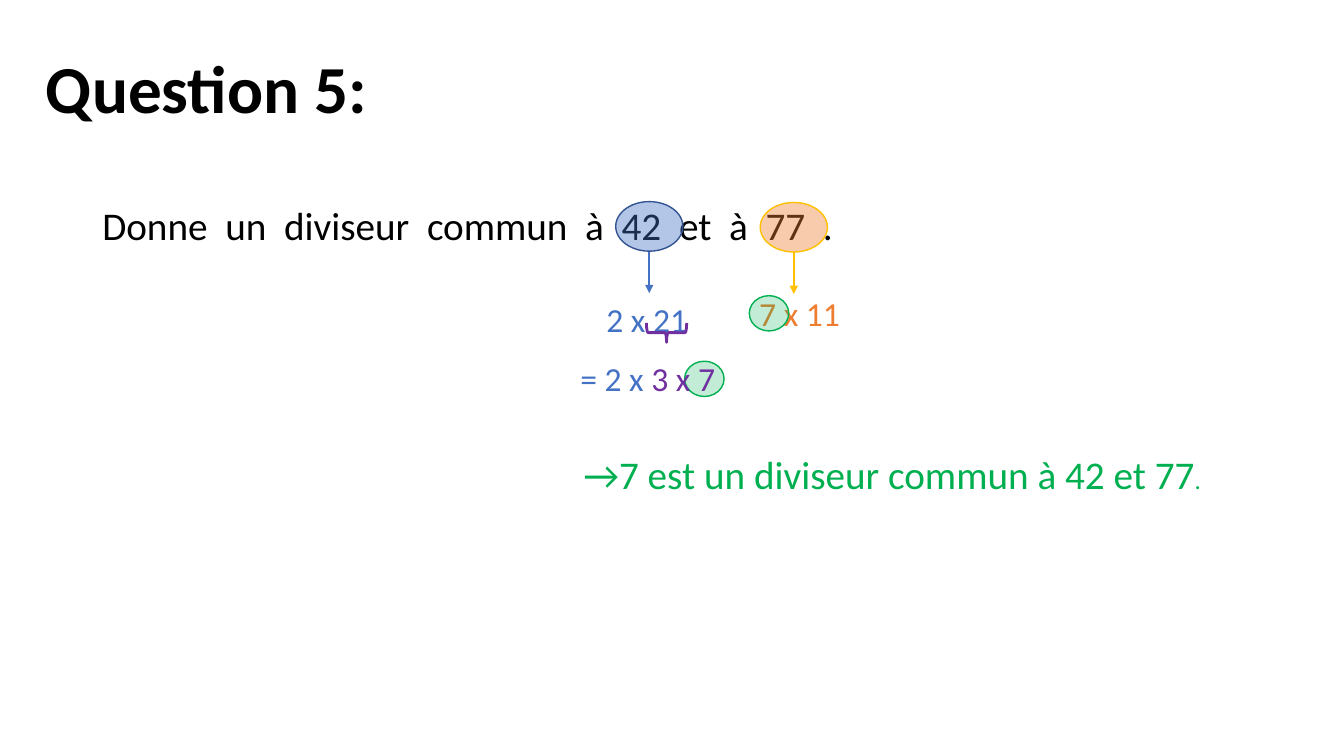
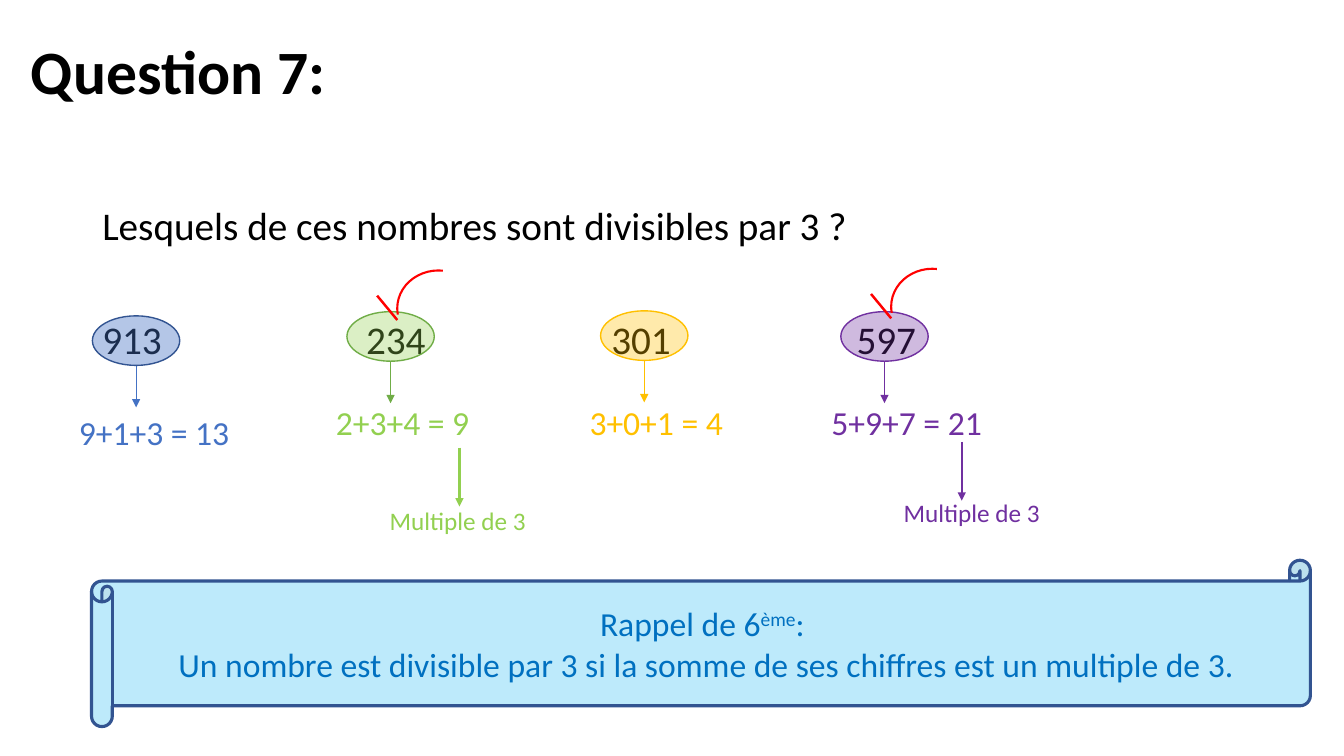
from lxml.etree import SubElement
from pptx import Presentation
from pptx.dml.color import RGBColor
from pptx.enum.shapes import MSO_CONNECTOR, MSO_SHAPE
from pptx.enum.text import MSO_ANCHOR, PP_ALIGN
from pptx.oxml.ns import qn
from pptx.util import Emu, Inches, Pt

COLS, ROWS = 160, 90
CELL = Inches(1) / 12
FONT = "Calibri"
HUES = {
    "black": "000000", "blue": "4472C4", "navy": "325491", "orange": "ED7D31",
    "gold": "FFC000", "green": "00B050", "lime": "92D050", "leaf": "70AD47",
    "purple": "7030A0", "red": "FF0000", "sky": "00B0F0", "ink": "0070C0",
}


def grid(*cells):
    return [Emu(round(n * CELL)) for n in cells]


def hue(name):
    return RGBColor.from_string(HUES[name])


def write(frame, lines, size=24, color="black", bold=False, align=None,
          anchor=MSO_ANCHOR.TOP, lead=None):
    frame.word_wrap = True
    frame.vertical_anchor = anchor
    for at, line in enumerate(lines):
        para = frame.paragraphs[0] if at == 0 else frame.add_paragraph()
        para.alignment = align
        para.line_spacing = lead
        for part in line:
            words, style = part if isinstance(part, tuple) else (part, {})
            run = para.add_run()
            run.text = words
            font = run.font
            font.name, font.bold = FONT, bold
            font.size = Pt(style.get("size", size))
            font.color.rgb = hue(style.get("color", color))
            for key in ("baseline", "spc"):
                if key in style:
                    font._element.set(key, str(style[key]))


def label(slide, box, *parts, **style):
    frame = slide.shapes.add_textbox(*grid(*box)).text_frame
    write(frame, [parts], **style)


def title(slide, left, top, words, size):
    label(slide, (left, top, 138, 17.4), words, size=size, bold=True,
          anchor=MSO_ANCHOR.MIDDLE, lead=0.9)


def ask(slide, *parts):
    label(slide, (11, 24, 138, 7), *parts, size=28, lead=0.9)


def shape(slide, kind, box, edge, width=1, fill=None, alpha=100):
    item = slide.shapes.add_shape(kind, *grid(*box))
    item.shadow.inherit = False
    item.line.color.rgb = hue(edge)
    item.line.width = Pt(width)
    if fill:
        item.fill.solid()
        item.fill.fore_color.rgb = hue(fill)
        tint = item._element.spPr.find(qn("a:solidFill"))[0]
        SubElement(tint, qn("a:alpha")).set("val", str(alpha * 1000))
    else:
        item.fill.background()
    return item


def stroke(slide, start, end, color, width, head=False):
    item = slide.shapes.add_connector(MSO_CONNECTOR.STRAIGHT, *grid(*start, *end))
    item.line.color.rgb = hue(color)
    item.line.width = Pt(width)
    props = item._element.spPr
    if head:
        SubElement(props.find(qn("a:ln")), qn("a:tailEnd")).set("type", "triangle")
    SubElement(props, qn("a:effectLst"))


def arrow(slide, left, top, drop, color, width):
    stroke(slide, (left, top), (left, top + drop), color, width, head=True)


def ring(slide, box, fill, edge, alpha, color, width):
    left, top, wide, high = box
    arrow(slide, left + wide / 2, top + high, 5, color, width)
    shape(slide, MSO_SHAPE.OVAL, box, edge, fill=fill, alpha=alpha)


def tick(slide, left, top):
    stroke(slide, (left, top + 3), (left + 2.4, top + 5.9), "red", 1.75)
    arc = shape(slide, MSO_SHAPE.ARC, (left + 2.4, top, 9.8, 9), "red", 1.5)
    arc.adjustments[0] = 102.68
    arc.adjustments[1] = 166.11


def test(slide, left, top, number, inset, total, shift, fill, edge, alpha, color):
    label(slide, (left + inset, 37, 12, 7), number, size=28)
    ring(slide, (left, top, 10.4, 5.9), fill, edge, alpha, color, 0.5)
    label(slide, (left + shift[0], top + shift[1], 22, 6), total, color=fill)


def proof(slide, left, top, shift, color):
    arrow(slide, left, top, 7, color, 1.5)
    label(slide, (left + shift[0], top + shift[1], 20, 5), "Multiple de 3",
          size=18, color=color)


def scroll(slide, box):
    item = shape(slide, MSO_SHAPE.HORIZONTAL_SCROLL, box, "navy", 2.25, "sky", 26)
    lines = [
        ["Rappel de 6", ("ème", {"baseline": 30000}), ": "],
        ["Un nombre est divisible par 3 si la somme de ses chiffres est un multiple de 3."],
    ]
    write(item.text_frame, lines, color="ink", align=PP_ALIGN.CENTER,
          anchor=MSO_ANCHOR.MIDDLE)


def common(slide):
    title(slide, 4.3, 2.2, "Question 5:", 48)
    words = "Donne un diviseur commun à 42 et à 77 .".split()
    parts = [words[0]]
    for word in words[1:]:
        parts += [(" ", {"spc": 633}), word]
    ask(slide, *parts)
    label(slide, (71, 35, 14, 6), "2 x 21", color="blue")
    ring(slide, (73.3, 24, 8, 5.9), "blue", "navy", 40, "blue", 1.25)
    label(slide, (89.2, 34.3, 14, 6), "7 x 11", color="orange")
    ring(slide, (90.5, 24.1, 8, 5.9), "orange", "gold", 40, "gold", 1.25)
    for left, top in ((81.5, 43), (89.2, 35.2)):
        shape(slide, MSO_SHAPE.OVAL, (left, top, 4.7, 4.2), "green",
              fill="green", alpha=24)
    label(slide, (68.3, 53, 80, 7), "→7 est un diviseur commun à 42 et 77",
          (".", {"size": 18}), size=28, color="green")
    brace = shape(slide, MSO_SHAPE.RIGHT_BRACE, (78.2, 37.2, 2.3, 4.8), "purple", 2)
    brace.rotation = 90
    label(slide, (67.9, 42, 20, 6), "= 2 x ", ("3 x 7", {"color": "purple"}),
          color="blue")


def thirds(slide):
    title(slide, 2.5, 0.2, "Question 7:", 44)
    ask(slide, "Lesquels de ces nombres sont divisibles par 3 ?")
    tests = [
        (11, 37.6, "913", 0, "9+1+3 = 13", (-2.8, 10.8), "blue", "navy", 40, "blue"),
        (41.3, 37.1, "234", 1.1, "2+3+4 = 9", (-2.5, 10.1), "lime", "leaf", 33, "leaf"),
        (71.5, 37, "301", 0.1, "3+0+1 = 4", (-2.5, 10.2), "gold", "gold", 33, "gold"),
        (100.1, 37.1, "597", 0.7, "5+9+7 = 21", (-2.3, 10.1), "purple", "purple", 33, "purple"),
    ]
    for row in tests:
        test(slide, *row)
    proof(slide, 54.7, 53.3, (-9.5, 6.3), "lime")
    proof(slide, 114.5, 52.6, (-8.1, 6), "purple")
    tick(slide, 44.9, 32.2)
    tick(slide, 103.7, 32)
    scroll(slide, (10.9, 66.7, 145.1, 19.8))


def main():
    deck = Presentation()
    deck.slide_width, deck.slide_height = grid(COLS, ROWS)
    for draw in (common, thirds):
        draw(deck.slides.add_slide(deck.slide_layouts[6]))
    deck.save("out.pptx")


if __name__ == "__main__":
    main()
